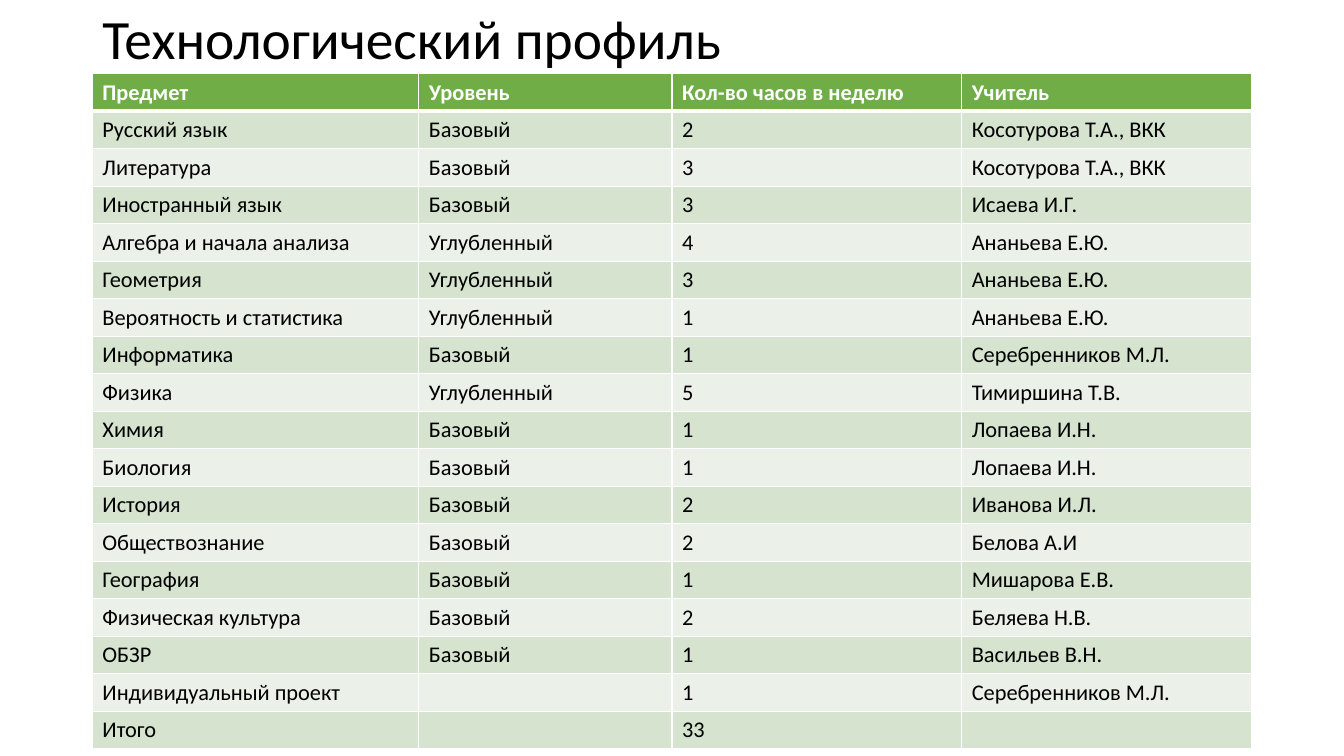
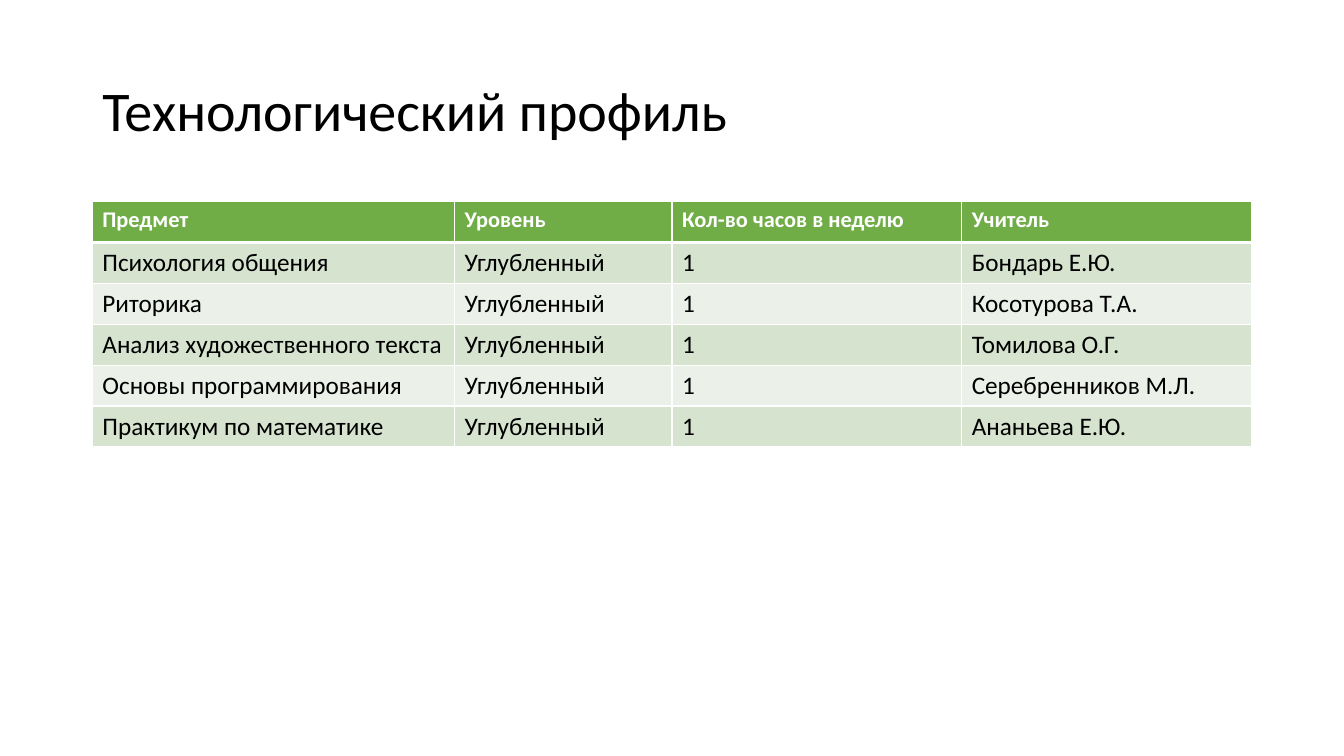
"""Build two slides listing the subjects of a technology study profile."""

from dataclasses import dataclass

import lxml.etree
import pptx
import pptx.dml.color
import pptx.enum.text
import pptx.oxml.ns
import pptx.presentation
import pptx.slide
import pptx.table
import pptx.util

Pt = pptx.util.Pt


@dataclass(frozen=True)
class Theme:
    font: str = "Calibri"
    text: str = "000000"
    header_text: str = "FFFFFF"
    header_fill: str = "70AD47"
    odd_fill: str = "D5E3CF"
    even_fill: str = "EBF1E9"
    border: str = "FFFFFF"
    thin_border: float = 1
    thick_border: float = 3
    header_size: float = 16


@dataclass(frozen=True)
class SubjectSlide:
    title_top: float
    title_height: float
    title_size: float
    table_top: float
    row_height: float
    body_size: float
    column_widths: tuple[float, ...]
    rows: tuple[tuple[str, ...], ...]


THEME = Theme()
SLIDE_WIDTH, SLIDE_HEIGHT = 960, 540
LEFT, WIDTH = 66, 828
TITLE = "Технологический профиль"
HEADER = ("Предмет", "Уровень", "Кол-во часов в неделю", "Учитель")
BASIC, ADVANCED = "Базовый", "Углубленный"

SLIDES = (
    SubjectSlide(
        title_top=12.2,
        title_height=34.6,
        title_size=39.6,
        table_top=52.7,
        row_height=26.4,
        body_size=16,
        column_widths=(233.2, 180.8, 207, 207),
        rows=(
            ("Русский язык", BASIC, "2", "Косотурова Т.А., ВКК"),
            ("Литература", BASIC, "3", "Косотурова Т.А., ВКК"),
            ("Иностранный язык", BASIC, "3", "Исаева И.Г."),
            ("Алгебра и начала анализа", ADVANCED, "4", "Ананьева Е.Ю."),
            ("Геометрия", ADVANCED, "3", "Ананьева Е.Ю."),
            ("Вероятность и статистика", ADVANCED, "1", "Ананьева Е.Ю."),
            ("Информатика", BASIC, "1", "Серебренников М.Л."),
            ("Физика", ADVANCED, "5", "Тимиршина Т.В."),
            ("Химия", BASIC, "1", "Лопаева И.Н."),
            ("Биология", BASIC, "1", "Лопаева И.Н."),
            ("История", BASIC, "2", "Иванова И.Л."),
            ("Обществознание", BASIC, "2", "Белова А.И"),
            ("География", BASIC, "1", "Мишарова Е.В."),
            ("Физическая культура", BASIC, "2", "Беляева Н.В."),
            ("ОБЗР", BASIC, "1", "Васильев В.Н."),
            ("Индивидуальный проект", "", "1", "Серебренников М.Л."),
            ("Итого", "", "33", ""),
        ),
    ),
    SubjectSlide(
        title_top=28.8,
        title_height=104.4,
        title_size=40,
        table_top=144,
        row_height=29.2,
        body_size=18,
        column_widths=(258.8, 155.2, 207, 207),
        rows=(
            ("Психология общения", ADVANCED, "1", "Бондарь Е.Ю."),
            ("Риторика", ADVANCED, "1", "Косотурова Т.А."),
            ("Анализ художественного текста", ADVANCED, "1", "Томилова О.Г."),
            ("Основы программирования", ADVANCED, "1", "Серебренников М.Л."),
            ("Практикум по математике", ADVANCED, "1", "Ананьева Е.Ю."),
        ),
    ),
)


def rgb(color: str) -> pptx.dml.color.RGBColor:
    return pptx.dml.color.RGBColor.from_string(color)


def format_runs(paragraph, size: float, color: str, bold: bool = False) -> None:
    for run in paragraph.runs:
        run.font.name = THEME.font
        run.font.size = Pt(size)
        run.font.bold = bold
        run.font.color.rgb = rgb(color)


def add_title(slide: pptx.slide.Slide, content: SubjectSlide) -> None:
    shape = slide.shapes.add_textbox(
        Pt(LEFT), Pt(content.title_top), Pt(WIDTH), Pt(content.title_height)
    )
    text_frame = shape.text_frame
    text_frame.word_wrap = True
    text_frame.auto_size = pptx.enum.text.MSO_AUTO_SIZE.NONE
    text_frame.vertical_anchor = pptx.enum.text.MSO_ANCHOR.MIDDLE
    text_frame.text = TITLE
    paragraph = text_frame.paragraphs[0]
    paragraph.line_spacing = 0.9
    format_runs(paragraph, content.title_size, THEME.text)


def set_borders(cell: pptx.table._Cell, row_index: int) -> None:
    qn = pptx.oxml.ns.qn
    properties = cell._tc.get_or_add_tcPr()
    thick_side = {0: "lnB", 1: "lnT"}.get(row_index)
    for side in ("lnL", "lnR", "lnT", "lnB"):
        width = THEME.thick_border if side == thick_side else THEME.thin_border
        line = lxml.etree.SubElement(properties, qn(f"a:{side}"), w=str(int(Pt(width))))
        fill = lxml.etree.SubElement(line, qn("a:solidFill"))
        lxml.etree.SubElement(fill, qn("a:srgbClr"), val=THEME.border)


def fill_cell(cell: pptx.table._Cell, text: str, row_index: int, body_size: float) -> None:
    is_header = row_index == 0
    size = THEME.header_size if is_header else body_size
    color = THEME.header_text if is_header else THEME.text
    band = THEME.odd_fill if row_index % 2 else THEME.even_fill
    set_borders(cell, row_index)
    cell.fill.solid()
    cell.fill.fore_color.rgb = rgb(THEME.header_fill if is_header else band)
    cell.text_frame.text = text
    paragraph = cell.text_frame.paragraphs[0]
    format_runs(paragraph, size, color, is_header)
    if not text:
        lxml.etree.SubElement(
            paragraph._p, pptx.oxml.ns.qn("a:endParaRPr"), sz=str(int(size * 100))
        )


def add_subject_table(slide: pptx.slide.Slide, content: SubjectSlide) -> None:
    rows = (HEADER, *content.rows)
    table = slide.shapes.add_table(
        len(rows), len(HEADER), Pt(LEFT), Pt(content.table_top),
        Pt(WIDTH), Pt(content.row_height * len(rows)),
    ).table
    table.horz_banding = False
    for column, width in zip(table.columns, content.column_widths):
        column.width = Pt(width)
    for row_index, row in enumerate(rows):
        table.rows[row_index].height = Pt(content.row_height)
        for column_index, text in enumerate(row):
            fill_cell(table.cell(row_index, column_index), text, row_index, content.body_size)


def main() -> None:
    presentation = pptx.Presentation()
    presentation.slide_width = Pt(SLIDE_WIDTH)
    presentation.slide_height = Pt(SLIDE_HEIGHT)
    for content in SLIDES:
        slide = presentation.slides.add_slide(presentation.slide_layouts[6])
        add_title(slide, content)
        add_subject_table(slide, content)
    presentation.save("out.pptx")


if __name__ == "__main__":
    main()
